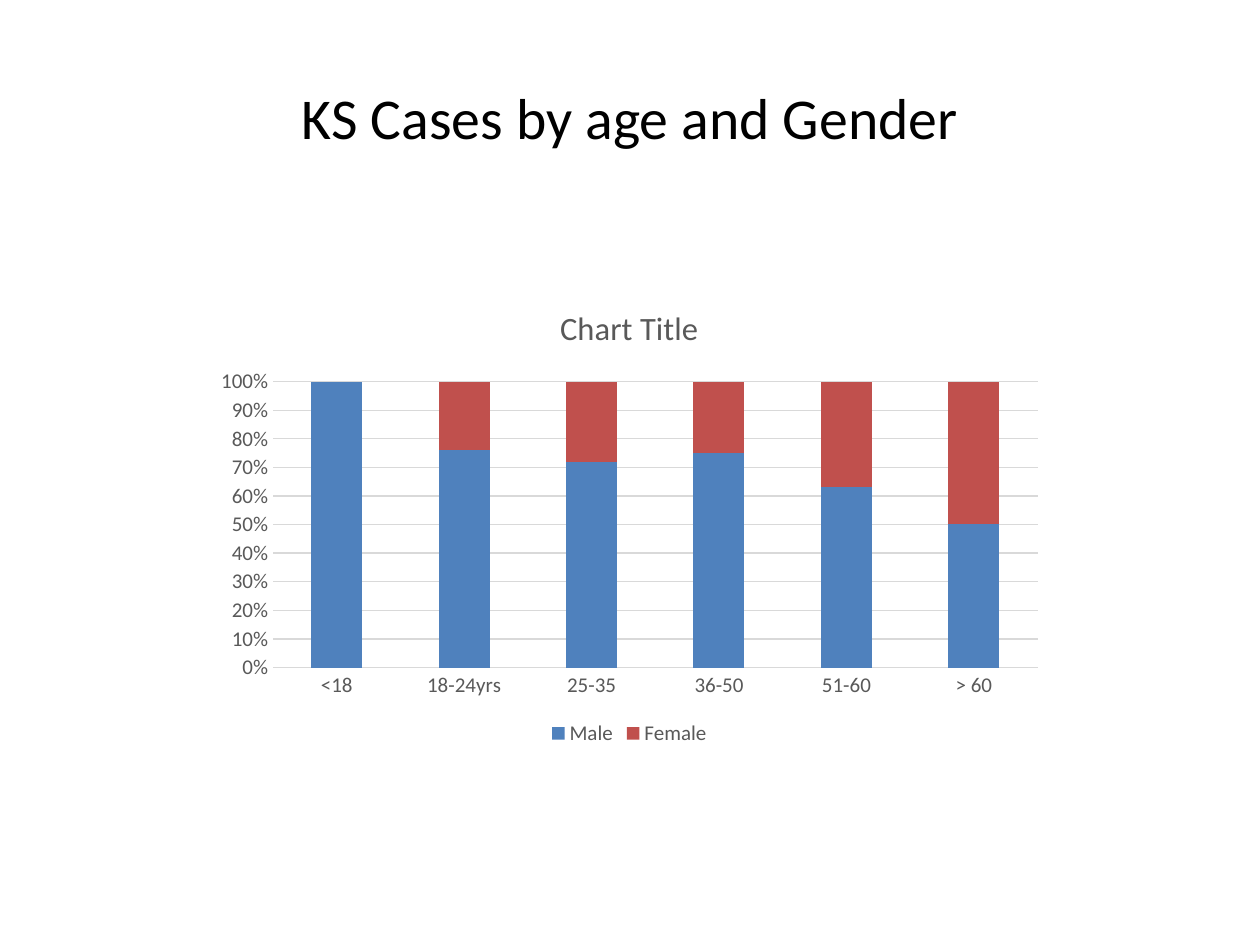
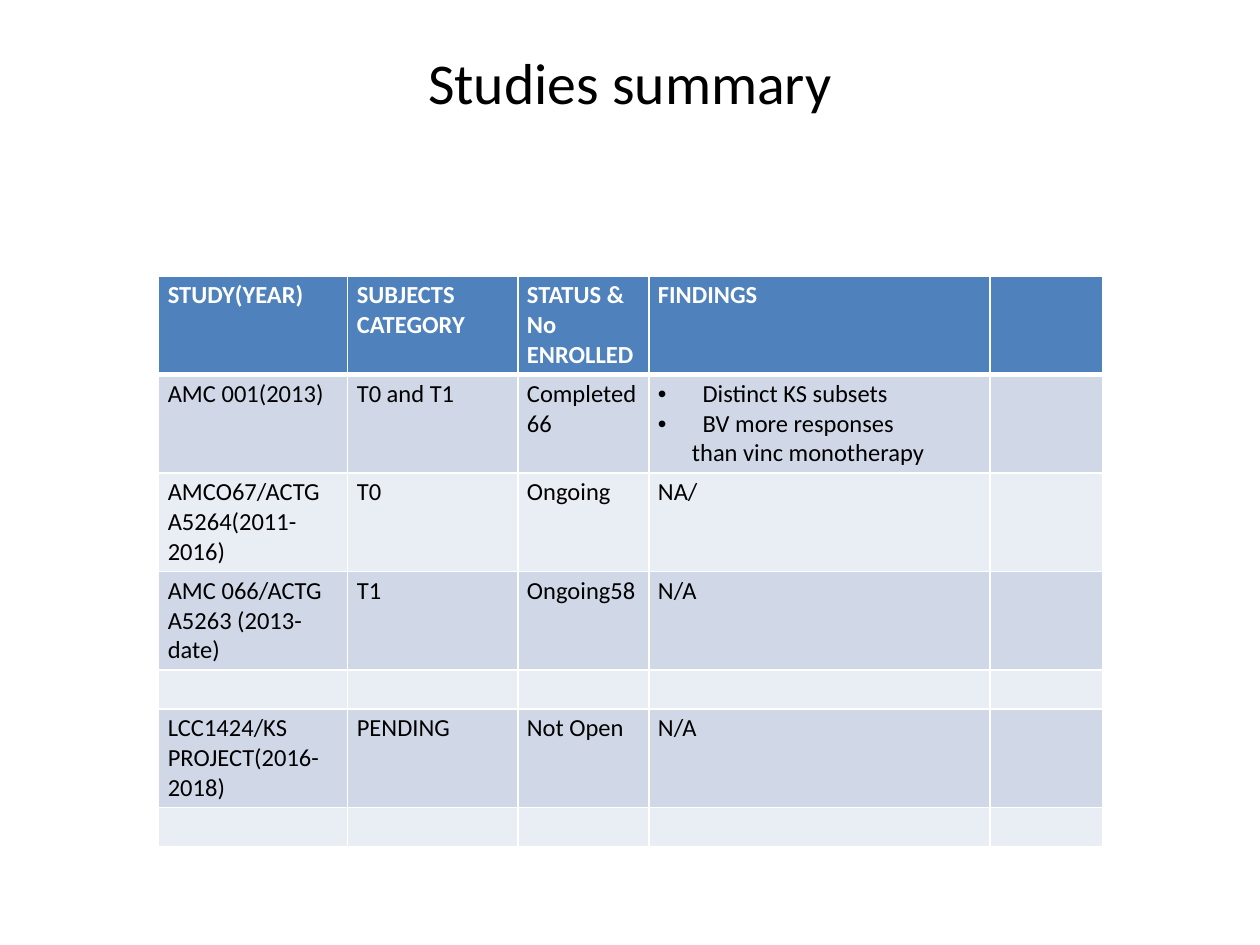
from lxml import etree
from pptx import Presentation
from pptx.chart.data import CategoryChartData
from pptx.dml.color import RGBColor
from pptx.enum.chart import XL_CHART_TYPE, XL_LEGEND_POSITION, XL_TICK_MARK
from pptx.enum.text import MSO_ANCHOR, PP_ALIGN
from pptx.oxml.ns import qn
from pptx.util import Pt

STACKED = XL_CHART_TYPE.COLUMN_STACKED_100
BOTTOM = XL_LEGEND_POSITION.BOTTOM
NO_TICK = XL_TICK_MARK.NONE
MIDDLE = MSO_ANCHOR.MIDDLE
CENTER = PP_ALIGN.CENTER

FONT = "Calibri"
BLACK, WHITE, GREY, GRID = "000000", "FFFFFF", "595959", "D9D9D9"
BLUE, RED = "4F81BD", "C0504D"
BANDS = ["D0D8E8", "E9EDF4"]

CASES_TITLE = "KS Cases by age and Gender"
CHART_TITLE = "Chart Title"
AGES = ["<18", "18-24yrs", "25-35", "36-50", "51-60", "> 60"]
GENDERS = [
    ("Male", BLUE, [100, 76, 72, 75, 63, 50]),
    ("Female", RED, [0, 24, 28, 25, 37, 50]),
]

STUDIES_TITLE = "Studies summary"
EMPTY = [""] * 5
STUDIES = [
    ["STUDY(YEAR)", "SUBJECTS CATEGORY", "STATUS & No ENROLLED", "FINDINGS", ""],
    ["AMC 001(2013)", "T0 and T1", "Completed\n66",
     "• Distinct KS subsets\n• BV more responses\nthan vinc monotherapy", ""],
    ["AMCO67/ACTG A5264(2011-2016)", "T0", "Ongoing", "NA/", ""],
    ["AMC 066/ACTG A5263 (2013-date)", "T1", "Ongoing58", "N/A", ""],
    EMPTY,
    ["LCC1424/KS PROJECT(2016-2018)", "PENDING", "Not Open", "N/A", ""],
    EMPTY,
]
COLUMN_WIDTHS = [108, 97.2, 74.9, 194.8, 64.8]
FULL_ROW, EMPTY_ROW = 54, 21.6
BULLET_INDENT, CONTINUATION_INDENT = 25.5, 19.4


def rgb(value):
    return RGBColor.from_string(value)


def style_font(font, size, color, bold=False):
    font.name = FONT
    font.size = Pt(size)
    font.bold = bold
    font.color.rgb = rgb(color)


def add_titled_slide(deck, words, space_below=3.6):
    slide = deck.slides.add_slide(deck.slide_layouts[5])
    title = slide.shapes.title
    title.left, title.top, title.width, title.height = Pt(36), Pt(21.6), Pt(648), Pt(90)
    frame = title.text_frame
    frame.text = words
    frame.vertical_anchor = MIDDLE
    frame.margin_bottom = Pt(space_below)
    heading = frame.paragraphs[0]
    heading.alignment = CENTER
    style_font(heading.runs[0].font, 33, BLACK)
    return slide


def add_cases_chart(slide):
    data = CategoryChartData()
    data.categories = AGES
    for gender, _, shares in GENDERS:
        data.add_series(gender, shares)
    chart = slide.shapes.add_chart(
        STACKED, Pt(116.64), Pt(162), Pt(486), Pt(267.1), data).chart
    style_font(chart.font, 12, GREY)

    chart.has_title = True
    chart.chart_title.include_in_layout = False
    caption = chart.chart_title.text_frame
    caption.text = CHART_TITLE
    style_font(caption.paragraphs[0].runs[0].font, 18.6, GREY)

    chart.has_legend = True
    chart.legend.position = BOTTOM
    chart.legend.include_in_layout = False
    style_font(chart.legend.font, 12, GREY)

    ages, shares = chart.category_axis, chart.value_axis
    for axis in (ages, shares):
        axis.major_tick_mark = axis.minor_tick_mark = NO_TICK
        style_font(axis.tick_labels.font, 12, GREY)
    shares.has_major_gridlines = True
    for line in (ages.format.line, shares.major_gridlines.format.line):
        line.color.rgb = rgb(GRID)
        line.width = Pt(0.75)
    shares.format.line.fill.background()
    shares.minimum_scale, shares.maximum_scale, shares.major_unit = 0, 1, 0.1
    shares.tick_labels.number_format = "0%"
    shares.tick_labels.number_format_is_linked = False

    plot = chart.plots[0]
    plot.gap_width, plot.overlap = 150, 100
    plot.vary_by_categories = False
    for series, (_, color, _) in zip(plot.series, GENDERS):
        series.format.fill.solid()
        series.format.fill.fore_color.rgb = rgb(color)


def add_borders(cell, widths):
    properties = cell._tc.get_or_add_tcPr()
    for position, (side, width) in enumerate(widths.items()):
        line = etree.Element(qn("a:ln" + side), w=str(int(Pt(width))))
        fill = etree.SubElement(line, qn("a:solidFill"))
        etree.SubElement(fill, qn("a:srgbClr"), val=WHITE)
        properties.insert(position, line)


def indent(paragraph, margin, bullet=False):
    properties = paragraph._p.get_or_add_pPr()
    properties.set("marL", str(int(Pt(margin))))
    if bullet:
        properties.set("indent", str(-int(Pt(margin))))
        etree.SubElement(properties, qn("a:buFont"), typeface="Arial")
        etree.SubElement(properties, qn("a:buChar"), char="•")


def fill_cell(cell, words, row):
    header = row == 0
    cell.fill.solid()
    cell.fill.fore_color.rgb = rgb(BLUE if header else BANDS[(row - 1) % 2])
    add_borders(cell, {"L": 1, "R": 1, "T": 3 if row == 1 else 1, "B": 3 if header else 1})
    cell.margin_left = cell.margin_right = Pt(5.2)
    cell.margin_top = cell.margin_bottom = Pt(2.6)
    cell.text_frame.text = words.replace("• ", "")
    bulleted = "•" in words
    for paragraph, line in zip(cell.text_frame.paragraphs, words.split("\n")):
        if line.startswith("•"):
            indent(paragraph, BULLET_INDENT, bullet=True)
        elif bulleted:
            indent(paragraph, CONTINUATION_INDENT)
        for run in paragraph.runs:
            style_font(run.font, 14, WHITE if header else BLACK, header)
        if not line:
            etree.SubElement(paragraph._p, qn("a:endParaRPr"), sz="1400")


def add_studies_table(slide):
    heights = [FULL_ROW if any(study) else EMPTY_ROW for study in STUDIES]
    table = slide.shapes.add_table(
        len(STUDIES), len(COLUMN_WIDTHS), Pt(90.72), Pt(157.68),
        Pt(sum(COLUMN_WIDTHS)), Pt(sum(heights))).table
    for column, width in zip(table.columns, COLUMN_WIDTHS):
        column.width = Pt(width)
    for row, (study, height) in enumerate(zip(STUDIES, heights)):
        table.rows[row].height = Pt(height)
        for column, words in enumerate(study):
            fill_cell(table.cell(row, column), words, row)


def main():
    deck = Presentation()
    deck.slide_width, deck.slide_height = Pt(720), Pt(540)
    add_cases_chart(add_titled_slide(deck, CASES_TITLE))
    add_studies_table(add_titled_slide(deck, STUDIES_TITLE, space_below=43.6))
    deck.save("out.pptx")


if __name__ == "__main__":
    main()
